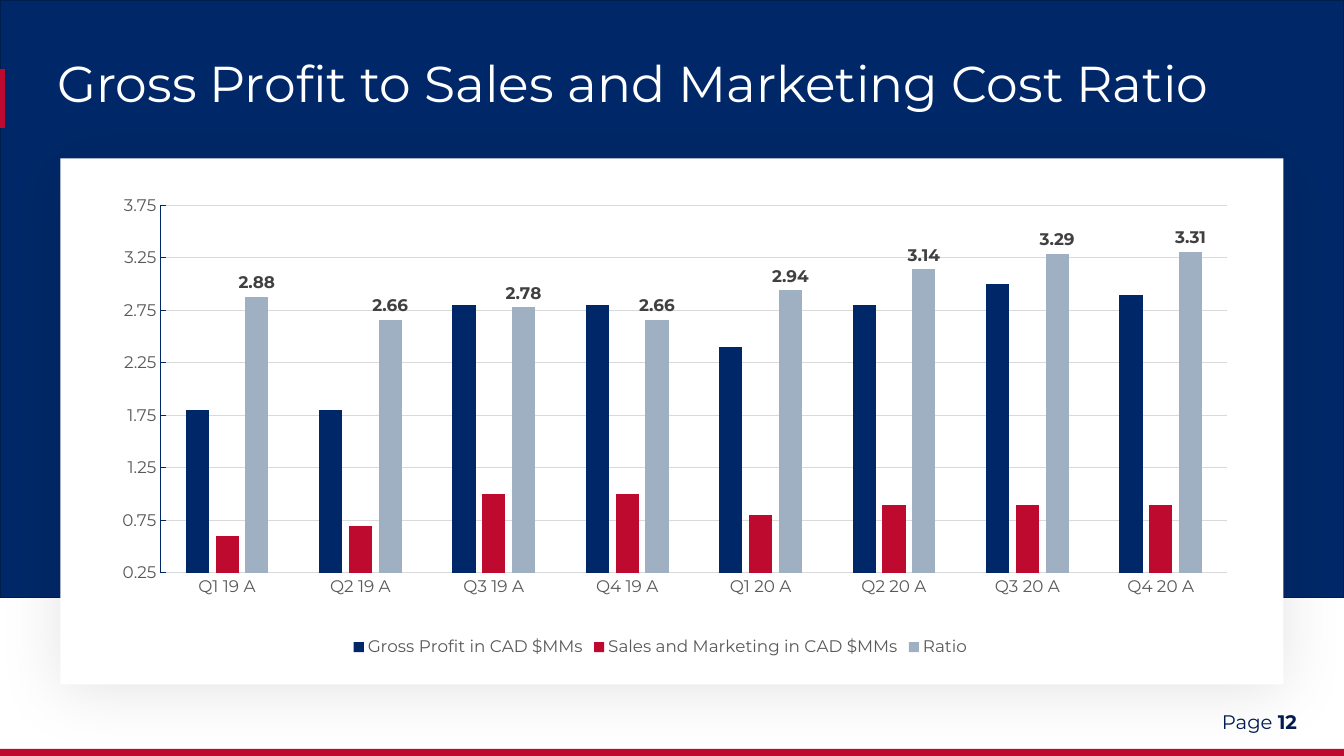
from lxml import etree
from pptx import Presentation
from pptx.chart.data import CategoryChartData
from pptx.dml.color import RGBColor
from pptx.enum.chart import XL_CHART_TYPE, XL_LABEL_POSITION, XL_LEGEND_POSITION, XL_TICK_MARK
from pptx.enum.shapes import MSO_CONNECTOR, MSO_SHAPE
from pptx.enum.text import MSO_ANCHOR
from pptx.oxml import parse_xml
from pptx.oxml.ns import qn
from pptx.util import Inches, Pt

RECT = MSO_SHAPE.RECTANGLE
STRAIGHT = MSO_CONNECTOR.STRAIGHT
MIDDLE = MSO_ANCHOR.MIDDLE
COLUMNS = XL_CHART_TYPE.COLUMN_CLUSTERED
BOTTOM = XL_LEGEND_POSITION.BOTTOM
OUTSIDE_END = XL_LABEL_POSITION.OUTSIDE_END
NO_TICK, TICK_IN = XL_TICK_MARK.NONE, XL_TICK_MARK.INSIDE

NAVY, RED, STEEL, WHITE = "002868", "BF0A30", "A0B0C3", "FFFFFF"
GREY, GRID, LABEL = "595959", "D9D9D9", "404040"
A_NS = "http://schemas.openxmlformats.org/drawingml/2006/main"
C_NS = "http://schemas.openxmlformats.org/drawingml/2006/chart"

QUARTERS = [f"Q{q} {year} A" for year in (19, 20) for q in range(1, 5)]
SERIES = [
    ("Gross Profit in CAD $MMs", NAVY, (1.8, 1.8, 2.8, 2.8, 2.4, 2.8, 3, 2.9)),
    ("Sales and Marketing in CAD $MMs", RED, (0.6, 0.7, 1, 1, 0.8, 0.9, 0.9, 0.9)),
    ("Ratio", STEEL, (2.88, 2.66, 2.78, 2.66, 2.94, 3.14, 3.29, 3.31)),
]


def rgb(color):
    return RGBColor.from_string(color)


class SlideBuilder:
    def __init__(self, slide, font="Montserrat"):
        self.s = slide
        self.font = font

    def style(self, font, size, color, bold=False):
        font.name, font.size, font.bold = self.font, Pt(size), bold
        font.color.rgb = rgb(color)

    def stroke(self, line, color, width):
        line.color.rgb = rgb(color)
        line.width = Pt(width)

    def rect(self, x, y, w, h, fill, line=None):
        sp = self.s.shapes.add_shape(RECT, Inches(x), Inches(y), Inches(w), Inches(h))
        sp.shadow.inherit = False
        sp.fill.solid()
        sp.fill.fore_color.rgb = rgb(fill)
        if line:
            self.stroke(sp.line, line, 1)
        else:
            sp.line.fill.background()
        return sp

    def soft_shadow(self, sp, alpha, blur, dist):
        effects = sp._element.spPr.find(qn("a:effectLst"))
        effects.append(parse_xml(
            f'<a:outerShdw xmlns:a="{A_NS}" blurRad="{Pt(blur)}" dist="{Pt(dist)}" '
            f'dir="5400000" algn="t" rotWithShape="0"><a:srgbClr val="000000">'
            f'<a:alpha val="{alpha * 1000}"/></a:srgbClr></a:outerShdw>'))

    def line(self, x1, y1, x2, y2, color, width):
        cn = self.s.shapes.add_connector(STRAIGHT, Inches(x1), Inches(y1), Inches(x2), Inches(y2))
        self.stroke(cn.line, color, width)
        etree.SubElement(cn._element.spPr, qn("a:effectLst"))

    def text(self, x, y, w, h, runs, size, color, spacing=None):
        tf = self.s.shapes.add_textbox(Inches(x), Inches(y), Inches(w), Inches(h)).text_frame
        tf.word_wrap = True
        tf.vertical_anchor = MIDDLE
        p = tf.paragraphs[0]
        p.line_spacing = spacing
        for words, bold in runs:
            r = p.add_run()
            r.text = words
            self.style(r.font, size, color, bold)

    def plot_layout(self, chart, x, y, w, h):
        area = chart._chartSpace.chart.plotArea
        for old in area.findall(qn("c:layout")):
            area.remove(old)
        area.insert(0, parse_xml(
            f'<c:layout xmlns:c="{C_NS}"><c:manualLayout><c:layoutTarget val="inner"/>'
            f'<c:xMode val="edge"/><c:yMode val="edge"/><c:x val="{x}"/><c:y val="{y}"/>'
            f'<c:w val="{w}"/><c:h val="{h}"/></c:manualLayout></c:layout>'))

    def column_chart(self, x, y, w, h, cats, series):
        data = CategoryChartData(number_format="0.00")
        data.categories = cats
        for name, _, values in series:
            data.add_series(name, values)
        chart = self.s.shapes.add_chart(
            COLUMNS, Inches(x), Inches(y), Inches(w), Inches(h), data).chart
        self.style(chart.font, 10, "000000")
        chart.has_title = False
        self.plot_layout(chart, 0.068, 0.05, 0.922, 0.766)

        # Columns
        plot = chart.plots[0]
        plot.gap_width, plot.overlap, plot.vary_by_categories = 219, -29, False
        for ser, (_, color, _) in zip(plot.series, series):
            ser.format.fill.solid()
            ser.format.fill.fore_color.rgb = rgb(color)
            ser.invert_if_negative = False

        # Axes
        cat, val = chart.category_axis, chart.value_axis
        for axis, color, tick in ((cat, GRID, NO_TICK), (val, NAVY, TICK_IN)):
            self.style(axis.tick_labels.font, 12, GREY)
            self.stroke(axis.format.line, color, 0.75)
            axis.major_tick_mark = tick
            axis.minor_tick_mark = NO_TICK
        val.minimum_scale, val.maximum_scale, val.major_unit = 0.25, 3.75, 0.5
        val.tick_labels.number_format = "0.00"
        val.tick_labels.number_format_is_linked = False
        self.stroke(val.major_gridlines.format.line, GRID, 0.75)

        # Legend
        chart.has_legend = True
        chart.legend.position = BOTTOM
        chart.legend.include_in_layout = False
        self.style(chart.legend.font, 12, GREY)

        # Value labels on the ratio
        labels = plot.series[-1].data_labels
        labels.show_value = True
        labels.position = OUTSIDE_END
        labels.number_format = "#,##0.00"
        labels.number_format_is_linked = False
        self.style(labels.font, 12, LABEL, True)


def main():
    prs = Presentation()
    prs.slide_width, prs.slide_height = Inches(13.33), Inches(7.5)
    b = SlideBuilder(prs.slides.add_slide(prs.slide_layouts[6]))

    # Background bands and card
    b.rect(0, 7.43, 13.33, 0.07, RED)
    b.rect(0, 0, 13.33, 5.93, NAVY, "001E4D")
    card = b.rect(0.6, 1.57, 12.13, 5.22, WHITE)
    b.soft_shadow(card, alpha=11, blur=46, dist=4)

    # Title with its accent
    b.text(0.47, 0.53, 12.4, 0.65,
           [("Gross Profit to Sales and Marketing Cost Ratio", False)], 36, WHITE, 0.9)
    b.line(0.02, 1.27, 0.02, 0.68, RED, 4)

    # Chart
    b.column_chart(0.81, 1.8, 11.48, 4.76, QUARTERS, SERIES)

    # Page number
    b.text(12.02, 6.87, 1.38, 0.58, [("Page ", False), ("12", True)], 14, "021B52")

    prs.save("out.pptx")


if __name__ == "__main__":
    main()
